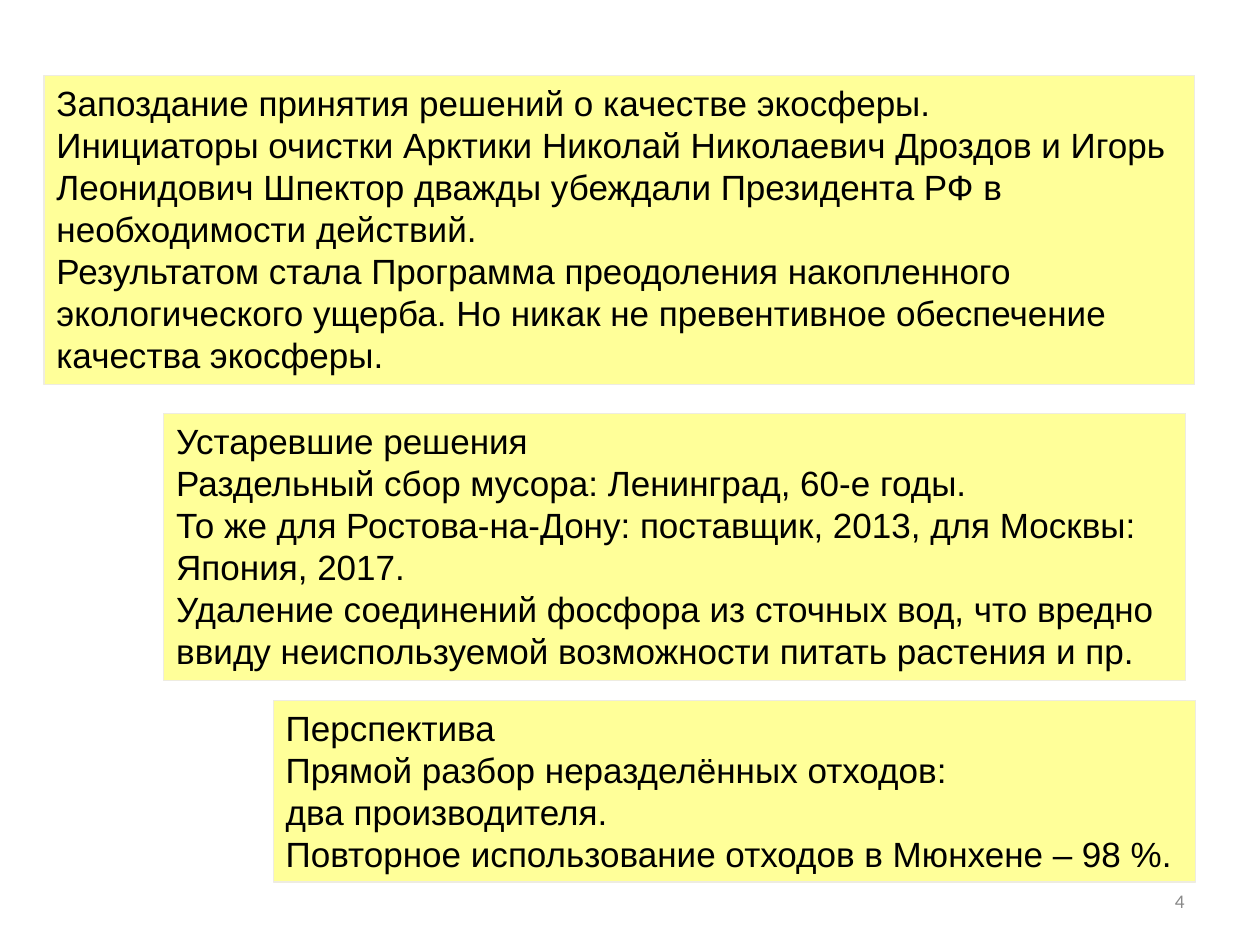
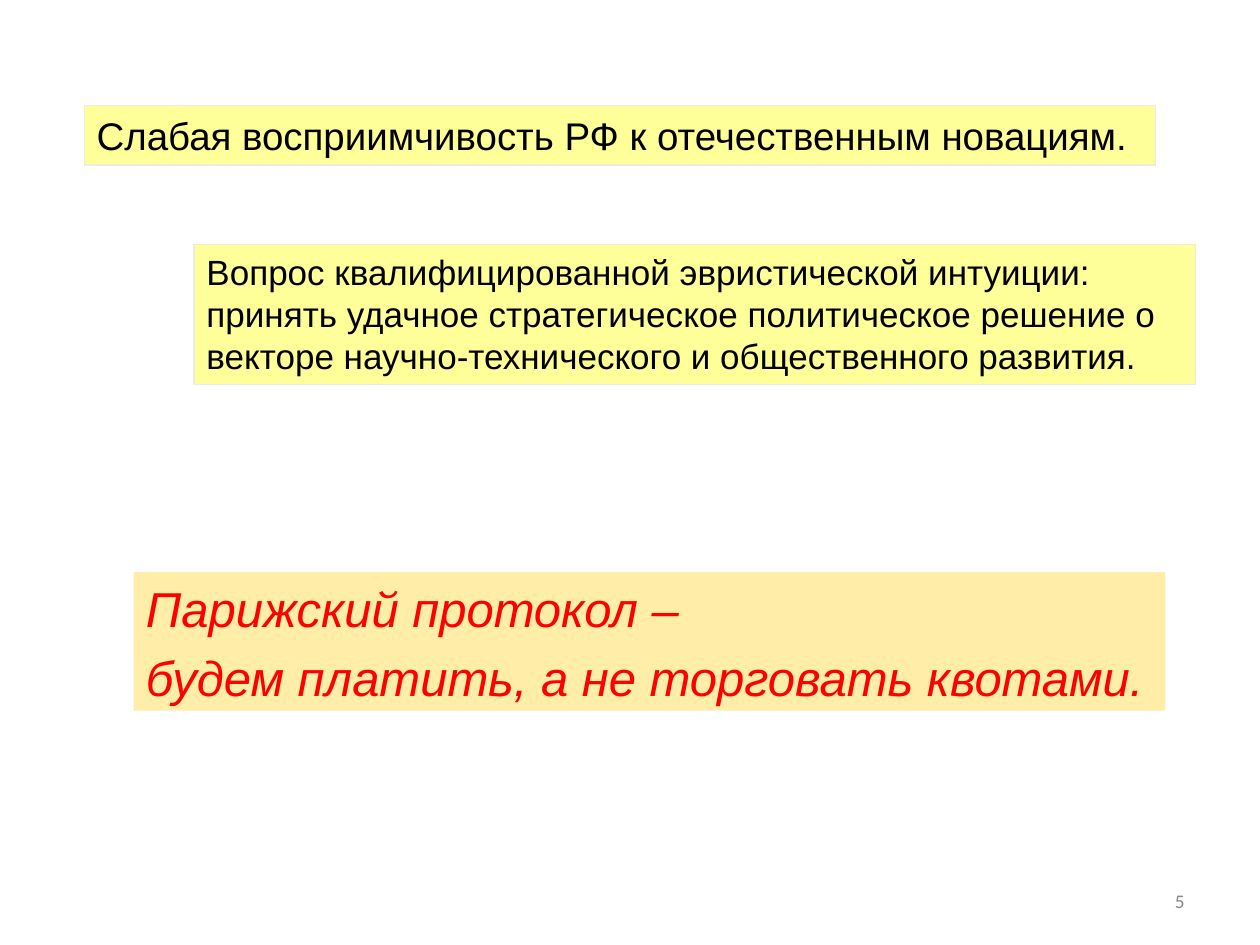
import pptx
import pptx.dml.color
import pptx.enum.shapes
import pptx.enum.text
import pptx.oxml
import pptx.oxml.ns
import pptx.util
from lxml import etree

Pt = pptx.util.Pt
PANEL_FILL = "FFFF99"
PANEL_LINE = "EEECE1"
ACCENT_FILL = "FFCC00"
ACCENT_OPACITY = 34
TEXT = "000000"
ACCENT_TEXT = "FF0000"
NUMBER_TEXT = "898989"
NUMBER_BOX = (516, 500.5, 168, 28.8)

DELAYS = [
    "Запоздание принятия решений о качестве экосферы.",
    "Инициаторы очистки Арктики Николай Николаевич Дроздов и Игорь Леонидович "
    "Шпектор дважды убеждали Президента РФ в необходимости действий.",
    "Результатом стала Программа преодоления накопленного экологического ущерба. "
    "Но никак не превентивное обеспечение качества экосферы.",
]
OUTDATED = [
    "Устаревшие решения",
    "Раздельный сбор мусора: Ленинград, 60-е годы.",
    "То же для Ростова-на-Дону: поставщик, 2013, для Москвы: Япония, 2017.",
    "Удаление соединений фосфора из сточных вод, что вредно ввиду "
    "неиспользуемой возможности питать растения и пр.",
]
PROSPECT = [
    "Перспектива",
    "Прямой разбор неразделённых отходов:",
    "два производителя.",
    "Повторное использование отходов в Мюнхене – 98 %.",
]
INNOVATION = ["Слабая восприимчивость РФ к отечественным новациям."]
INTUITION = [
    "Вопрос квалифицированной эвристической интуиции:",
    "принять удачное стратегическое политическое решение о векторе "
    "научно-технического и общественного развития.",
]
PROTOCOL = ["Парижский протокол –", "будем платить, а не торговать квотами."]


def rgb(hex_code):
    return pptx.dml.color.RGBColor.from_string(hex_code)


def style_font(font, size, color, name="Arial"):
    font.name = name
    font.size = Pt(size)
    font.color.rgb = rgb(color)


def add_box(slide, box, lines, size, fill, color):
    """Add a filled rectangle with one left-aligned paragraph per line."""
    panel = slide.shapes.add_shape(
        pptx.enum.shapes.MSO_SHAPE.RECTANGLE, *(Pt(length) for length in box))
    panel.shadow.inherit = False
    panel.fill.solid()
    panel.fill.fore_color.rgb = rgb(fill)
    frame = panel.text_frame
    frame.word_wrap = True
    frame.auto_size = pptx.enum.text.MSO_AUTO_SIZE.SHAPE_TO_FIT_TEXT
    frame.vertical_anchor = pptx.enum.text.MSO_ANCHOR.TOP
    frame.text = "\n".join(lines)
    for paragraph in frame.paragraphs:
        paragraph.alignment = pptx.enum.text.PP_ALIGN.LEFT
        for run in paragraph.runs:
            style_font(run.font, size, color)
    return panel


def add_panel(slide, box, lines, size=20):
    panel = add_box(slide, box, lines, size, PANEL_FILL, TEXT)
    panel.line.color.rgb = rgb(PANEL_LINE)
    panel.line.width = Pt(0.75)


def add_conclusion(slide, box, lines):
    """Add the translucent box with the red italic closing statement."""
    conclusion = add_box(slide, box, lines, 28, ACCENT_FILL, ACCENT_TEXT)
    conclusion.line.fill.background()
    tint = conclusion.fill._xPr.find(".//" + pptx.oxml.ns.qn("a:srgbClr"))
    etree.SubElement(tint, pptx.oxml.ns.qn("a:alpha"), val=str(ACCENT_OPACITY * 1000))
    for paragraph in conclusion.text_frame.paragraphs:
        for run in paragraph.runs:
            run.font.italic = True
    for paragraph in conclusion.text_frame.paragraphs[1:]:
        paragraph.space_before = Pt(6)


def add_number(slide, number):
    footer = slide.shapes.add_textbox(*(Pt(length) for length in NUMBER_BOX))
    frame = footer.text_frame
    frame.word_wrap = True
    frame.vertical_anchor = pptx.enum.text.MSO_ANCHOR.MIDDLE
    frame.text = str(number)
    paragraph = frame.paragraphs[0]
    paragraph.alignment = pptx.enum.text.PP_ALIGN.RIGHT
    style_font(paragraph.runs[0].font, 11, NUMBER_TEXT, "Calibri")


def add_numbered_slide(deck, number):
    slide = deck.slides.add_slide(deck.slide_layouts.get_by_name("Blank"))
    add_number(slide, number)
    return slide


def build_decisions_slide(deck):
    slide = add_numbered_slide(deck, 4)
    add_panel(slide, (25.2, 43.2, 657.4, 176.4), DELAYS)
    add_panel(slide, (93.6, 236.2, 583.9, 152.6), OUTDATED)
    add_panel(slide, (156.2, 400.3, 527, 103.7), PROSPECT)


def build_policy_slide(deck):
    slide = add_numbered_slide(deck, 5)
    add_panel(slide, (48.2, 60.5, 612, 33.8), INNOVATION, 22)
    add_panel(slide, (110.9, 139.7, 572.4, 79.9), INTUITION)
    add_conclusion(slide, (76.3, 326.9, 589.7, 79.2), PROTOCOL)


def main():
    deck = pptx.Presentation()
    deck.slide_width = Pt(720)
    deck.slide_height = Pt(540)
    build_decisions_slide(deck)
    build_policy_slide(deck)
    deck.save("out.pptx")


if __name__ == "__main__":
    main()
